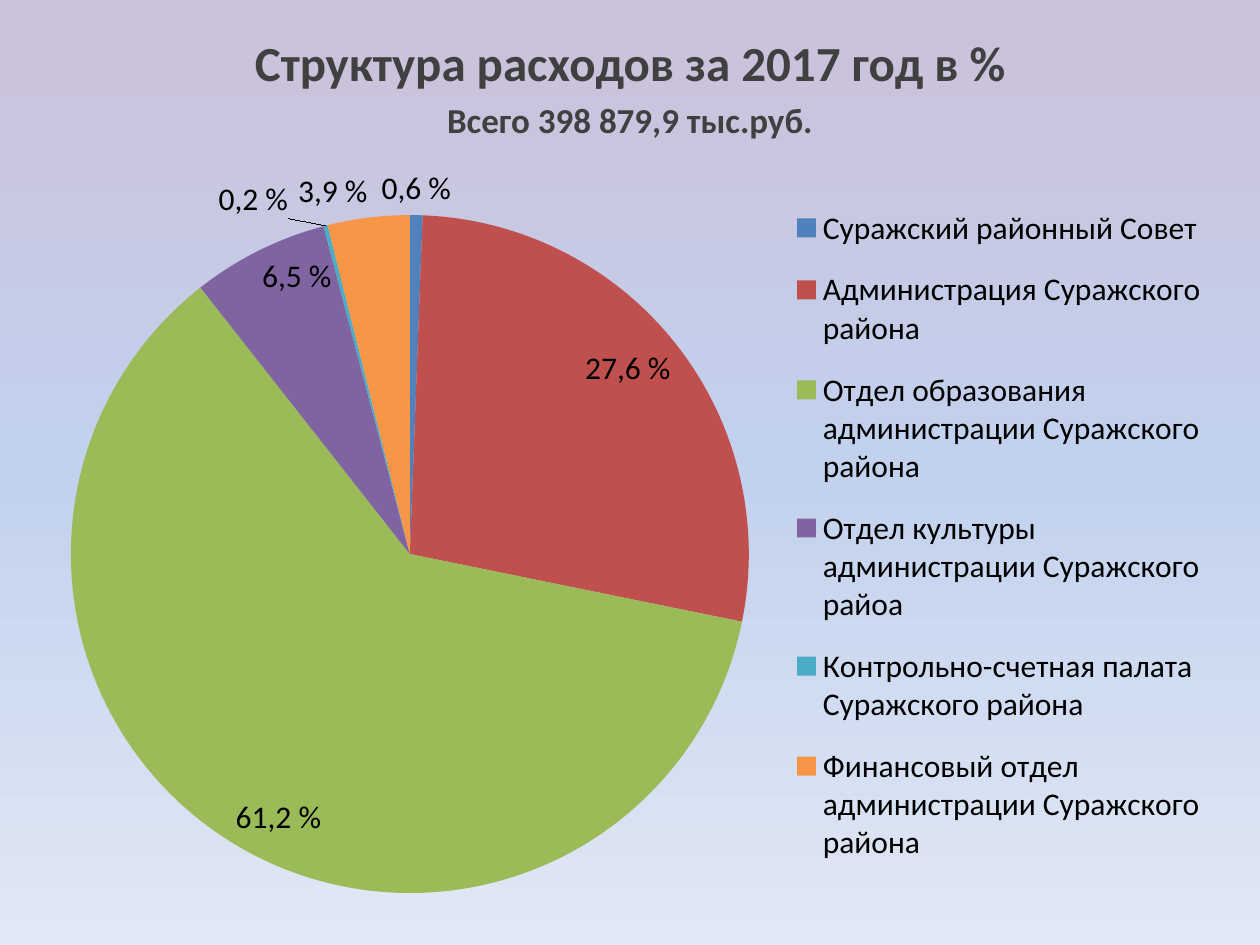
from copy import deepcopy

from lxml.etree import SubElement
from pptx import Presentation
from pptx.chart.data import CategoryChartData
from pptx.dml.color import RGBColor
from pptx.enum.chart import XL_CHART_TYPE as ChartType
from pptx.enum.chart import XL_LABEL_POSITION as LabelPosition
from pptx.enum.chart import XL_LEGEND_POSITION as LegendPosition
from pptx.enum.text import MSO_ANCHOR, PP_ALIGN
from pptx.oxml.ns import qn
from pptx.util import Pt

COLORS = {
    "sky top": "CCC1DA", "sky middle": "C2D1ED", "sky bottom": "E1E8F5",
    "heading": "404040", "chart text": "000000",
    "blue": "4F81BD", "red": "C0504D", "green": "9BBB59",
    "purple": "8064A2", "teal": "4BACC6", "orange": "F79646",
}
FONT = "Calibri"
INSIDE, OUTSIDE = LabelPosition.INSIDE_END, LabelPosition.OUTSIDE_END
SLICES = [
    ("Суражский районный Совет", 0.6, "blue", OUTSIDE),
    ("Администрация Суражского района", 27.6, "red", INSIDE),
    ("Отдел образования администрации Суражского района", 61.2, "green", INSIDE),
    ("Отдел культуры администрации Суражского райоа", 6.5, "purple", INSIDE),
    ("Контрольно-счетная палата Суражского района", 0.2, "teal", OUTSIDE),
    ("Финансовый отдел администрации Суражского района", 3.9, "orange", OUTSIDE),
]


def style_font(font, size, color, bold=False):
    for name, value in {"name": FONT, "size": Pt(size), "bold": bold}.items():
        setattr(font, name, value)
    font.color.rgb = RGBColor.from_string(COLORS[color])


def set_layout(parent, index, **values):
    """Give a chart part a manual layout, as fractions of the chart frame."""
    for old in parent.findall(qn("c:layout")):
        parent.remove(old)
    layout = SubElement(parent, qn("c:layout"))
    parent.insert(index, layout)
    manual = SubElement(layout, qn("c:manualLayout"))
    for name, value in values.items():
        SubElement(manual, qn(f"c:{name}")).set("val", str(value))


deck = Presentation()
deck.slide_width, deck.slide_height = Pt(720), Pt(540)
page = deck.slides.add_slide(deck.slide_layouts[6])

# Background gradient, running downwards
fill = page.background.fill
fill.gradient()
fill.gradient_angle = 270
stop_list = page.element.find(".//" + qn("a:gsLst"))
stop_list.append(deepcopy(stop_list[0]))
for stop, name, position in zip(
    fill.gradient_stops, ("sky top", "sky middle", "sky bottom"), (0, 0.5, 1)
):
    stop.color.rgb = RGBColor.from_string(COLORS[name])
    stop.position = position

# Heading
box = page.shapes.add_textbox(Pt(20), Pt(15), Pt(680), Pt(57))
frame = box.text_frame
frame.word_wrap = True
frame.vertical_anchor = MSO_ANCHOR.TOP
heading = [("Структура расходов за 2017 год в %", 28), ("Всего 398 879,9 тыс.руб.", 20)]
for index, (text, size) in enumerate(heading):
    para = frame.add_paragraph() if index else frame.paragraphs[0]
    para.alignment = PP_ALIGN.CENTER
    para.space_before = Pt(size * 0.2)
    span = para.add_run()
    span.text = text
    style_font(span.font, size, "heading", bold=True)

# Pie chart
data = CategoryChartData(number_format="0.0")
data.categories = [name for name, *_ in SLICES]
data.add_series("Series 1", [value for _, value, *_ in SLICES])
chart = page.shapes.add_chart(
    ChartType.PIE, Pt(20), Pt(88.5), Pt(680), Pt(430.5), data
).chart
chart.has_title = False
style_font(chart.font, 18, "chart text")
chart.has_legend = True
chart.legend.position = LegendPosition.RIGHT
chart.legend.include_in_layout = False
style_font(chart.legend.font, 18, "chart text")

plot = chart.plots[0]
plot.vary_by_categories = True
series = plot.series[0]
series.data_labels.show_value = True
for index, (_, value, color, position) in enumerate(SLICES):
    point = series.points[index]
    point.format.fill.solid()
    point.format.fill.fore_color.rgb = RGBColor.from_string(COLORS[color])
    label = point.data_label
    label.text_frame.text = f"{value} %".replace(".", ",")
    style_font(label.text_frame.paragraphs[0].runs[0].font, 18, "chart text")
    label.position = position

chart_root = chart.element
set_layout(chart_root.find(".//" + qn("c:plotArea")), 0, layoutTarget="inner",
           xMode="edge", yMode="edge", x=0.03, y=0.08, w=0.57, h=0.9)
set_layout(chart_root.find(".//" + qn("c:legend")), 1,
           xMode="edge", yMode="edge", x=0.63, y=0.04, w=0.36, h=0.93)
# The narrow teal slice has its label moved left, clear of its neighbour
set_layout(chart_root.findall(".//" + qn("c:dLbl"))[4], 1, x=-0.03, y=0)

deck.save("out.pptx")
